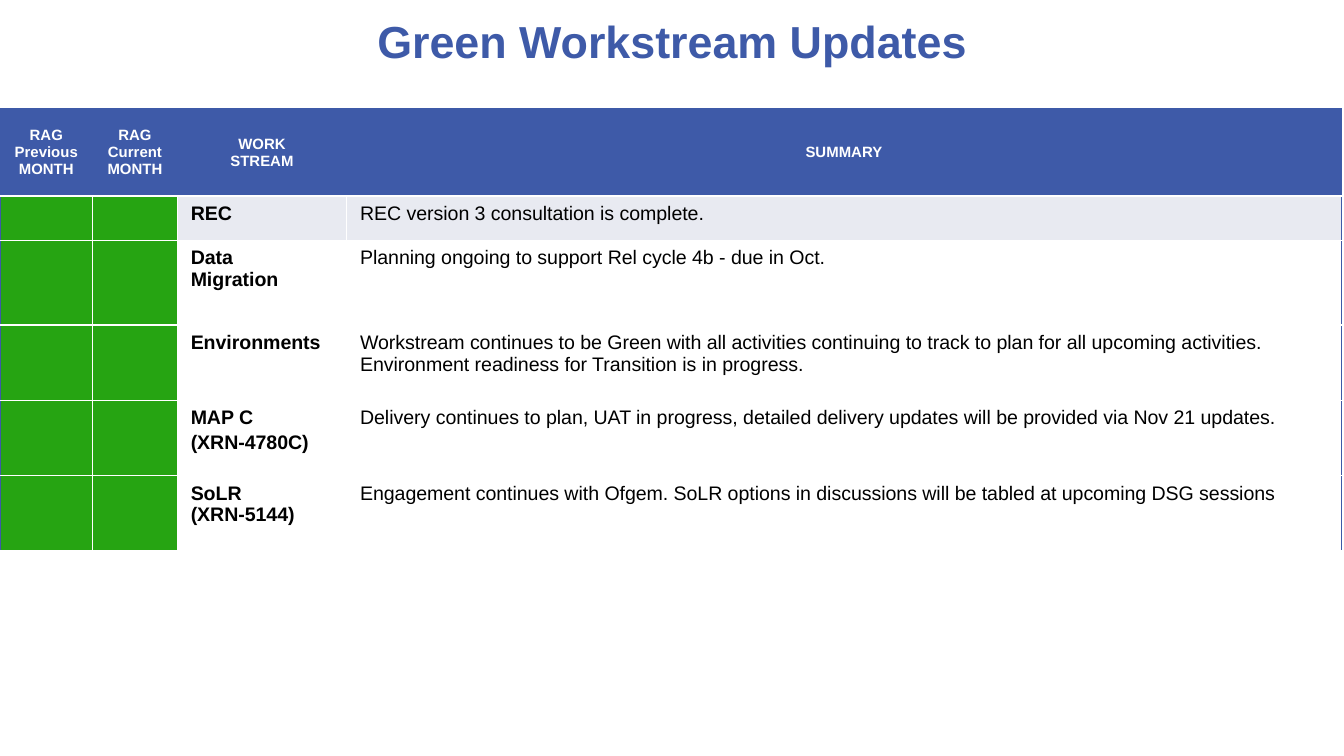
import pptx
import pptx.dml.color
import pptx.enum.text
import pptx.oxml.ns
import pptx.util
from lxml import etree
from pptx.util import Inches, Pt

COLORS = {
    "blue": "3E5AA8",
    "green": "26A412",
    "band": "E8EAF1",
    "white": "FFFFFF",
    "black": "000000",
}
COLUMN_WIDTHS = [0.69, 0.63, 1.26, 7.4]
ROW_HEIGHTS = [0.65, 0.33, 0.63, 0.56, 0.56, 0.56]
HEADINGS = ["RAG\nPrevious\nMONTH", "RAG\nCurrent\nMONTH", "WORK\nSTREAM", "SUMMARY"]
WORKSTREAMS = [
    ("REC", "REC version 3 consultation is complete."),
    ("Data\nMigration", "Planning ongoing to support Rel cycle 4b - due in Oct."),
    ("Environments",
     "Workstream continues to be Green with all activities continuing to track to plan "
     "for all upcoming activities. Environment readiness for Transition is in progress."),
    ("MAP C\n(XRN-4780C)",
     "Delivery continues to plan, UAT in progress, detailed delivery updates "
     "will be provided via Nov 21 updates."),
    ("SoLR (XRN-5144)",
     "Engagement continues with Ofgem. SoLR options in discussions "
     "will be tabled at upcoming DSG sessions"),
]


def rgb(name):
    return pptx.dml.color.RGBColor.from_string(COLORS[name])


def write_text(frame, text, size=10.5, color="black", bold=False, centered=False, gap=0):
    """Write one paragraph per line, with gap points between paragraphs."""
    for index, line in enumerate(text.split("\n")):
        paragraph = frame.add_paragraph() if index else frame.paragraphs[0]
        if centered:
            paragraph.alignment = pptx.enum.text.PP_ALIGN.CENTER
        if index and gap:
            paragraph.space_before = Pt(gap)
        run = paragraph.add_run()
        run.text = line
        run.font.name = "Arial"
        run.font.size = Pt(size)
        run.font.bold = bold
        run.font.color.rgb = rgb(color)


def set_borders(cell, **hairlines):
    """Draw white borders, but hairlines in the given colours on the named sides (L, R, T, B)."""
    properties = cell._tc.get_or_add_tcPr()
    qn = pptx.oxml.ns.qn
    for index, side in enumerate("LRTB"):
        width = 0.5 if side in hairlines else 1
        line = etree.Element(qn(f"a:ln{side}"), w=str(Pt(width)))
        fill = etree.SubElement(line, qn("a:solidFill"))
        etree.SubElement(fill, qn("a:srgbClr"), val=COLORS[hairlines.get(side, "white")])
        properties.insert(index, line)


def fill_cell(cell, color, **hairlines):
    cell.fill.solid()
    cell.fill.fore_color.rgb = rgb(color)
    set_borders(cell, **hairlines)


def shrink_empty_cell(cell):
    """Keep a blank status cell from stretching its row."""
    paragraph = cell.text_frame.paragraphs[0]._p
    etree.SubElement(paragraph, pptx.oxml.ns.qn("a:endParaRPr"), sz="1050")


def add_title(slide, text):
    title = slide.shapes.add_textbox(Inches(0.5), Inches(0), Inches(9), Inches(0.61))
    frame = title.text_frame
    frame.word_wrap = True
    frame.vertical_anchor = pptx.enum.text.MSO_ANCHOR.MIDDLE
    write_text(frame, text, size=24, color="blue", bold=True, centered=True)


def add_status_table(slide):
    table = slide.shapes.add_table(
        len(ROW_HEIGHTS), len(COLUMN_WIDTHS), Inches(0), Inches(0.81),
        Inches(sum(COLUMN_WIDTHS)), Inches(sum(ROW_HEIGHTS))).table
    for column, width in zip(table.columns, COLUMN_WIDTHS):
        column.width = Inches(width)
    for row, height in zip(table.rows, ROW_HEIGHTS):
        row.height = Inches(height)

    for column, heading in enumerate(HEADINGS):
        cell = table.cell(0, column)
        fill_cell(cell, "blue", L="blue", R="blue", T="blue")
        cell.vertical_anchor = pptx.enum.text.MSO_ANCHOR.MIDDLE
        write_text(cell.text_frame, heading, size=8, color="white", bold=True, centered=True)

    outer_sides = [{"L": "blue"}, {}, {}, {"R": "blue"}]
    for row, (workstream, summary) in enumerate(WORKSTREAMS, start=1):
        band = "band" if row == 1 else "white"
        cells = table.rows[row].cells
        for cell, color, sides in zip(cells, ["green", "green", band, band], outer_sides):
            fill_cell(cell, color, **sides)
        for column in (0, 1):
            shrink_empty_cell(table.cell(row, column))
        gap = 1.6 if workstream.startswith("MAP") else 0
        write_text(table.cell(row, 2).text_frame, workstream, bold=True, gap=gap)
        write_text(table.cell(row, 3).text_frame, summary)


def main():
    presentation = pptx.Presentation()
    presentation.slide_width = Inches(10)
    presentation.slide_height = Inches(10) * 9 // 16
    slide = presentation.slides.add_slide(presentation.slide_layouts[6])
    add_status_table(slide)
    add_title(slide, "Green Workstream Updates")
    presentation.save("out.pptx")


if __name__ == "__main__":
    main()
